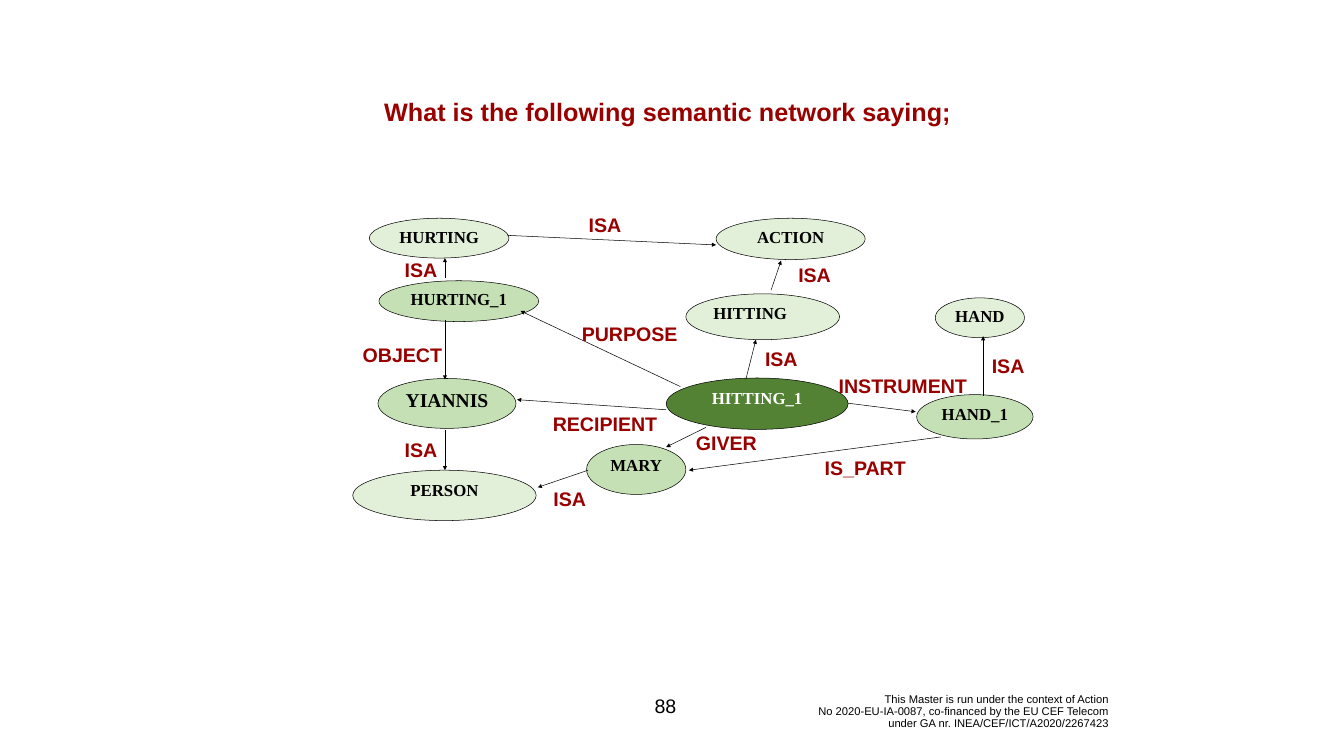
"""Build a slide showing a semantic network of concepts and labelled relations."""
from lxml import etree
from pptx import Presentation
from pptx.dml import color
from pptx.enum import shapes, text
from pptx.oxml import ns
from pptx.util import Inches, Pt

BLACK, WHITE, RED = "000000", "FFFFFF", "990000"
CLASS, INSTANCE, EVENT = "E2F0D9", "C5E0B4", "548235"
LEFT, CENTER, RIGHT = text.PP_ALIGN.LEFT, text.PP_ALIGN.CENTER, text.PP_ALIGN.RIGHT
TOP, MIDDLE = text.MSO_ANCHOR.TOP, text.MSO_ANCHOR.MIDDLE
LABEL_HEIGHT = 0.57

title = ("What is the following semantic network saying;", (6, 1.86, 14.5, 0.71))
page_number = ("88", (12.65, 13.61, 1.11, 0.8))
funding = (
    "\v".join([
        "This Master is run under the context of Action",
        "No 2020-EU-IA-0087, co-financed by the EU CEF Telecom",
        "under GA nr. INEA/CEF/ICT/A2020/2267423",
    ]),
    (15.02, 13.74, 7.08, 0.76),
)

concepts = [
    ("HURTING", (7.33, 4.33, 2.77, 0.79), CLASS),
    ("HURTING_1", (7.52, 5.57, 3.17, 0.81), INSTANCE),
    ("YIANNIS", (7.5, 7.51, 2.74, 0.99), INSTANCE),
    ("ACTION", (14.21, 4.33, 2.96, 0.82), CLASS),
    ("HITTING", (13.61, 5.83, 3.05, 0.91), CLASS),
    ("HITTING_1", (13.22, 7.5, 3.61, 1.02), EVENT),
    ("HAND_1", (18.19, 7.83, 2.31, 0.88), INSTANCE),
    ("HAND", (18.56, 5.91, 1.77, 0.79), CLASS),
    ("MARY", (11.64, 8.82, 1.97, 0.99), INSTANCE),
    ("PERSON", (7, 9.33, 3.64, 1), CLASS),
]

relations = [
    ("ISA", (11.17, 4.17, 1.67), (10.07, 4.67), (14.21, 4.86)),
    ("ISA", (7.52, 5.06, 1.67), (8.83, 5.52), (8.83, 5.12)),
    ("ISA", (15.33, 5.17, 1.67), (15.3, 5.76), (15.5, 5.17)),
    ("ISA", (14.67, 6.83, 1.67), (14.8, 7.53), (15, 6.74)),
    ("ISA", (19.17, 6.98, 1.67), (19.51, 7.85), (19.51, 6.67)),
    ("ISA", (7.52, 8.63, 1.67), (8.83, 8.54), (8.83, 9.33)),
    ("ISA", (10.47, 9.62, 1.67), (11.67, 9.33), (10.67, 9.67)),
    ("OBJECT", (5.9, 6.75, 4.17), (8.83, 6.35), (8.83, 7.53)),
    ("RECIPIENT", (9.92, 8.12, 4.17), (13.22, 8.13), (10.26, 7.93)),
    ("GIVER", (12.33, 8.5, 4.17), (14.01, 8.48), (13.22, 8.87)),
    ("PURPOSE", (11.33, 6.33, 2.33), (13.5, 7.67), (10.33, 6.17)),
    ("INSTRUMENT", (16.5, 7.36, 2.83), (16.83, 8), (18.17, 8.17)),
    ("IS_PART", (15.17, 9, 4), (18.67, 8.67), (13.67, 9.33)),
]


def rgb(value):
    return color.RGBColor.from_string(value)


def write(holder, words, size, ink, font="Arial", bold=False, align=CENTER, anchor=TOP):
    frame = holder.text_frame
    frame.word_wrap = True
    frame.vertical_anchor = anchor
    paragraph = frame.paragraphs[0]
    paragraph.text = words
    paragraph.alignment = align
    for run in paragraph.runs:
        run.font.name, run.font.size, run.font.bold = font, Pt(size), bold
        run.font.color.rgb = rgb(ink)
    return paragraph


def add_label(slide, words, box, size, ink, **style):
    return write(slide.shapes.add_textbox(*map(Inches, box)), words, size, ink, **style)


def add_concept(slide, name, box, fill):
    oval = slide.shapes.add_shape(shapes.MSO_SHAPE.OVAL, *map(Inches, box))
    oval.shadow.inherit = False
    oval.fill.solid()
    oval.fill.fore_color.rgb = rgb(fill)
    oval.line.color.rgb = rgb(BLACK)
    oval.line.width = Pt(0.75)
    write(oval, name, 28 if name == "YIANNIS" else 24,
          WHITE if fill == EVENT else BLACK, "Times New Roman", True,
          LEFT if name == "HITTING" else CENTER)


def add_arrow(slide, start, end):
    arrow = slide.shapes.add_connector(
        shapes.MSO_CONNECTOR.STRAIGHT, *map(Inches, start + end))
    arrow.line.color.rgb = rgb(BLACK)
    arrow.line.width = Pt(0.75)
    etree.SubElement(arrow.line._get_or_add_ln(), ns.qn("a:tailEnd"), type="triangle")
    etree.SubElement(arrow._element.spPr, ns.qn("a:effectLst"))


def main():
    deck = Presentation()
    deck.slide_width, deck.slide_height = Inches(26.67), Inches(15)
    slide = deck.slides.add_slide(deck.slide_layouts[6])

    add_label(slide, *funding, 16, BLACK, align=RIGHT, anchor=MIDDLE).line_spacing = 0.9
    add_label(slide, *page_number, 28, BLACK, anchor=MIDDLE)
    for concept in concepts:
        add_concept(slide, *concept)
    for _, _, start, end in relations:
        add_arrow(slide, start, end)
    add_label(slide, *title, 36, RED, bold=True)
    for name, place, _, _ in relations:
        add_label(slide, name, place + (LABEL_HEIGHT,), 28, RED, bold=True)

    deck.save("out.pptx")


if __name__ == "__main__":
    main()
